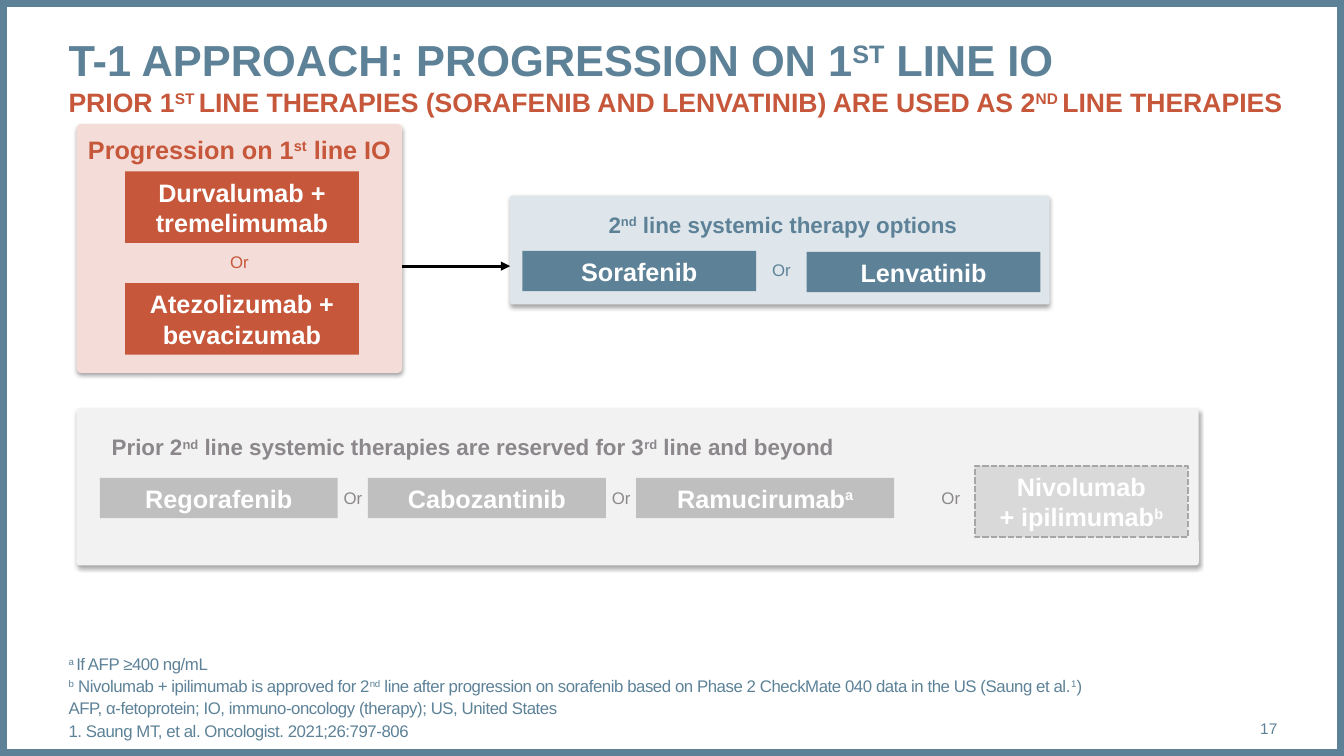
import pptx
import pptx.util
import pptx.dml.color
import pptx.enum.dml
import pptx.enum.shapes
import pptx.enum.text
import pptx.oxml
import pptx.oxml.ns

Inches, Pt = pptx.util.Inches, pptx.util.Pt
Kind = pptx.enum.shapes.MSO_SHAPE
Align = pptx.enum.text.PP_ALIGN
Anchor = pptx.enum.text.MSO_ANCHOR

# Content: text between ^ marks is superscript
COLORS = {
    "blue": "5D8298", "pale": "DEE6EB", "rust": "C6573B", "pink": "F4DDD8",
    "fog": "F2F2F2", "gray": "BFBFBF", "light": "D9D9D9", "edge": "A6A6A6",
    "text": "8B878B", "white": "FFFFFF", "black": "000000",
}
TITLE = [
    ("T-1 APPROACH: PROGRESSION ON 1^ST^ LINE IO", 31, "blue"),
    ("PRIOR 1^ST ^LINE THERAPIES (SORAFENIB AND LENVATINIB) ARE USED AS 2^ND ^LINE THERAPIES", 19, "rust"),
]
NOTES = [
    "^a ^If AFP ≥400 ng/mL",
    "^b^ Nivolumab + ipilimumab is approved for 2^nd^ line after progression on "
    "sorafenib based on Phase 2 CheckMate 040 data in the US (Saung et al.^1^)",
    "AFP, α-fetoprotein; IO, immuno-oncology (therapy); US, United States",
    "1. Saung MT, et al. Oncologist. 2021;26:797-806",
]
PANELS = [  # left, top, width, height, fill
    (0.76, 4.05, 11.13, 1.56, "fog"),
    (5.06, 1.94, 5.35, 1.08, "pale"),
    (0.76, 1.23, 3.23, 2.47, "pink"),
]
HEADS = [  # text, left, top, width, height, size, color
    ("Progression on 1^st^ line IO", 0.76, 1.28, 3.23, 0.4, 18, "rust"),
    ("2^nd^ line systemic therapy options", 5.88, 2.04, 3.77, 0.37, 16, "blue"),
]
PRIOR = "Prior 2^nd^ line systemic therapies are reserved for 3^rd^ line and beyond"
FIRST = ["Durvalumab + tremelimumab", "Atezolizumab + bevacizumab"]
SECOND = [("Sorafenib", 5.18, 2.49), ("Lenvatinib", 8, 2.5)]
THIRD = [("Regorafenib", 2.36), ("Cabozantinib", 2.36), ("Ramucirumab^a^", 2.56)]
COMBO = ["Nivolumab", "+ ipilimumab^b^"]

prs = pptx.Presentation()
prs.slide_width, prs.slide_height = Inches(13.33), Inches(7.5)
slide = prs.slides.add_slide(prs.slide_layouts[1])
shapes = slide.shapes


def rgb(name):
    return pptx.dml.color.RGBColor.from_string(COLORS[name])


def place(shape, x, y, w, h):
    shape.left, shape.top = Inches(x), Inches(y)
    shape.width, shape.height = Inches(w), Inches(h)


def setup(shape, anchor, pad=(0.1, 0.05), wrap=True):
    frame = shape.text_frame
    frame.auto_size = pptx.enum.text.MSO_AUTO_SIZE.NONE
    frame.word_wrap = wrap
    frame.vertical_anchor = anchor
    frame.margin_left = frame.margin_right = Inches(pad[0])
    frame.margin_top = frame.margin_bottom = Inches(pad[1])
    return frame


def write(para, text, size, color, bold=False, align=Align.CENTER, space=None):
    para.alignment = align
    for i, part in enumerate(text.split("^")):
        if not part:
            continue
        run = para.add_run()
        run.text = part
        run.font.name, run.font.size, run.font.bold = "Arial", Pt(size), bold
        run.font.color.rgb = rgb(color)
        props = run._r.get_or_add_rPr()
        if i % 2:
            props.set("baseline", "30000")
        if space:
            props.set("spc", str(space))


def lines(frame, count):
    return [frame.paragraphs[0]] + [frame.add_paragraph() for _ in range(count - 1)]


def block(x, y, w, h, fill=None, kind=Kind.RECTANGLE):
    shape = shapes.add_shape(kind, Inches(x), Inches(y), Inches(w), Inches(h))
    shape.shadow.inherit = False
    shape.line.fill.background()
    if fill:
        shape.fill.solid()
        shape.fill.fore_color.rgb = rgb(fill)
    else:
        shape.fill.background()
    return shape


def drug(texts, x, y, w, h, fill):
    shape = block(x, y, w, h, fill)
    for para, text in zip(lines(setup(shape, Anchor.MIDDLE), len(texts)), texts):
        write(para, text, 18, "white", True)
    return shape


def label(text, x, y, w, h, size, color, bold=False, align=Align.CENTER,
          pad=(0.1, 0.05), wrap=True):
    box = shapes.add_textbox(Inches(x), Inches(y), Inches(w), Inches(h))
    frame = setup(box, Anchor.MIDDLE, pad, wrap)
    write(frame.paragraphs[0], text, size, color, bold, align)


def either(mid, y, color):
    label("Or", mid - 0.545, y, 1.09, 0.3, 12, color)


# Frame around the slide
frame = block(0, 0, 13.33, 7.5)
frame.line.color.rgb, frame.line.width = rgb("blue"), Pt(10)

# Panels with soft shadows
SHADE = (
    '<a:outerShdw %s blurRad="39370" dist="22860" dir="5400000" rotWithShape="0">'
    '<a:srgbClr val="000000"><a:alpha val="35000"/></a:srgbClr></a:outerShdw>'
    % pptx.oxml.ns.nsdecls("a")
)
for *spot, fill in PANELS:
    panel = block(*spot, fill, Kind.ROUNDED_RECTANGLE)
    panel.adjustments[0] = 0.019
    effects = panel._element.spPr.find(pptx.oxml.ns.qn("a:effectLst"))
    effects.append(pptx.oxml.parse_xml(SHADE))

# Arrow from first to second line
arrow = shapes.add_connector(pptx.enum.shapes.MSO_CONNECTOR.STRAIGHT,
                             Inches(3.99), Inches(2.64), Inches(5.06), Inches(2.64))
arrow.line.color.rgb, arrow.line.width = rgb("black"), Pt(2.25)
tip = pptx.oxml.parse_xml('<a:tailEnd %s type="triangle"/>' % pptx.oxml.ns.nsdecls("a"))
arrow.line._get_or_add_ln().append(tip)
arrow._element.spPr.append(
    pptx.oxml.parse_xml("<a:effectLst %s/>" % pptx.oxml.ns.nsdecls("a")))

# Title
title = shapes.title
place(title, 0.68, 0.28, 12.29, 0.94)
paras = lines(setup(title, Anchor.MIDDLE, (0, 0)), len(TITLE))
for para, (text, size, color) in zip(paras, TITLE):
    write(para, text, size, color, True, Align.LEFT)

# Headings
for text, x, y, w, h, size, color in HEADS:
    label(text, x, y, w, h, size, color, True)
label(PRIOR, 1.01, 4.25, 7.62, 0.37, 16, "text", True, Align.LEFT, wrap=False)

# First line
for i, text in enumerate(FIRST):
    drug([text], 1.24, 1.7 + 1.11 * i, 2.32, 0.71, "rust")
either(2.375, 2.45, "rust")

# Second line
for text, x, y in SECOND:
    drug([text], x, y, 2.32, 0.4, "blue")
either(7.75, 2.53, "blue")

# Third line and beyond
x, gap = 0.99, 0.3
for i, (text, w) in enumerate(THIRD):
    if i:
        either(x - gap / 2, 4.79, "text")
    drug([text], x, 4.74, w, 0.4, "gray")
    x += w + gap
either(9.43, 4.79, "text")
combo = drug(COMBO, 9.67, 4.62, 2.11, 0.71, "light")
combo.line.color.rgb, combo.line.width = rgb("edge"), Pt(1.5)
combo.line.dash_style = pptx.enum.dml.MSO_LINE.SQUARE_DOT

# Footnotes and page number
notes = slide.placeholders[1]
place(notes, 0.68, 6.45, 11.82, 0.9)
for i, (para, text) in enumerate(zip(lines(setup(notes, Anchor.BOTTOM, (0, 0)), len(NOTES)), NOTES)):
    props = para._p.get_or_add_pPr()
    props.set("marL", "0")
    props.set("indent", "0")
    props.append(pptx.oxml.parse_xml("<a:buNone %s/>" % pptx.oxml.ns.nsdecls("a")))
    para.line_spacing = 0.9
    para.space_before = Pt(3 if i else 0)
    write(para, text, 12, "blue", False, Align.LEFT, -30)
label("17", 11.81, 7.03, 0.86, 0.4, 11, "blue", False, Align.RIGHT, (0, 0))

prs.save("out.pptx")
